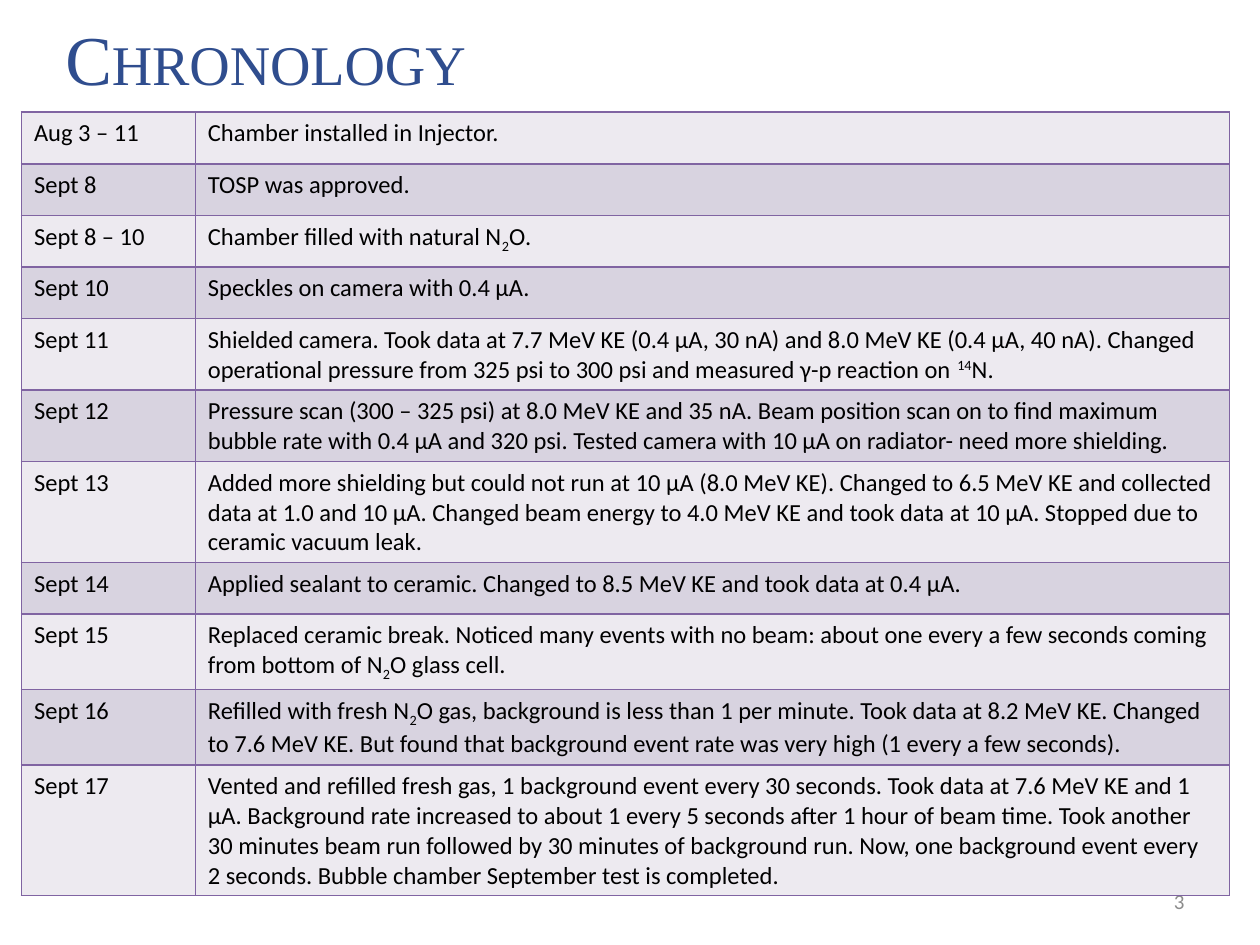
from pptx import Presentation
from pptx.dml.color import RGBColor
from pptx.enum.text import MSO_ANCHOR, PP_ALIGN
from pptx.oxml.ns import qn
from pptx.util import Inches, Pt
from lxml import etree

MIDDLE = MSO_ANCHOR.MIDDLE
LEFT, RIGHT = PP_ALIGN.LEFT, PP_ALIGN.RIGHT
SHIFTS = {"2": "-25000", "14": "30000"}
BANDS = ["EDEAF0", "D8D3E0"]
EDGE = "8064A2"


def color(code):
    return RGBColor.from_string(code)


def add_run(para, text, size, face, code):
    run = para.add_run()
    run.text = text
    run.font.size = Pt(size)
    run.font.name = face
    run.font.color.rgb = color(code)
    return run._r.get_or_add_rPr()


events = [
    ("Aug 3 – 11", "Chamber installed in Injector."),
    ("Sept 8", "TOSP was approved."),
    ("Sept 8 – 10", "Chamber filled with natural N|2|O."),
    ("Sept 10", "Speckles on camera with 0.4 μA."),
    ("Sept 11", "Shielded camera. Took data at 7.7 MeV KE (0.4 μA, 30 nA) and "
     "8.0 MeV KE (0.4 μA, 40 nA). Changed operational pressure from 325 psi to "
     "300 psi and measured γ-p reaction on |14|N."),
    ("Sept 12", "Pressure scan (300 – 325 psi) at 8.0 MeV KE and 35 nA. Beam "
     "position scan on to find maximum bubble rate with 0.4 μA and 320 psi. "
     "Tested camera with 10 μA on radiator- need more shielding."),
    ("Sept 13", "Added more shielding but could not run at 10 μA (8.0 MeV KE). "
     "Changed to 6.5 MeV KE and collected data at 1.0 and 10 μA. Changed beam "
     "energy to 4.0 MeV KE and took data at 10 μA. Stopped due to ceramic "
     "vacuum leak."),
    ("Sept 14", "Applied sealant to ceramic. Changed to 8.5 MeV KE and took "
     "data at 0.4 μA."),
    ("Sept 15", "Replaced ceramic break. Noticed many events with no beam: about "
     "one every a few seconds coming from bottom of N|2|O glass cell."),
    ("Sept 16", "Refilled with fresh N|2|O gas, background is less than 1 per "
     "minute. Took data at 8.2 MeV KE. Changed to 7.6 MeV KE. But found that "
     "background event rate was very high (1 every a few seconds)."),
    ("Sept 17", "Vented and refilled fresh gas, 1 background event every 30 "
     "seconds. Took data at 7.6 MeV KE and 1 μA. Background rate increased to "
     "about 1 every 5 seconds after 1 hour of beam time. Took another 30 minutes "
     "beam run followed by 30 minutes of background run. Now, one background "
     "event every 2 seconds. Bubble chamber September test is completed."),
]

deck = Presentation()
deck.slide_width, deck.slide_height = Inches(10), Inches(7.5)
slide = deck.slides.add_slide(deck.slide_layouts[6])

labels = [
    ("3", (7.17, 6.95, 2.33, 0.4), RIGHT, 12, "Calibri", "8C8C8C"),
    ("Chronology", (0.42, 0, 9, 0.92), LEFT, 40, "Times New Roman", "2F4D8E"),
]
for text, place, align, size, face, code in labels:
    box = slide.shapes.add_textbox(*map(Inches, place))
    frame = box.text_frame
    frame.word_wrap = True
    frame.vertical_anchor = MIDDLE
    para = frame.paragraphs[0]
    para.alignment = align
    props = add_run(para, text, size, face, code)
    if text == "Chronology":
        props.set("cap", "small")

widths = [1.38, 8.21]
height = 0.41
table = slide.shapes.add_table(
    len(events), len(widths), Inches(0.17), Inches(0.89),
    Inches(sum(widths)), Inches(height * len(events))).table
table.first_row = False
for column, width in zip(table.columns, widths):
    column.width = Inches(width)

for row, event in enumerate(events):
    table.rows[row].height = Inches(height)
    for col, text in enumerate(event):
        cell = table.cell(row, col)
        props = cell._tc.get_or_add_tcPr()
        for side in ("lnL", "lnR", "lnT", "lnB"):
            line = etree.SubElement(props, qn("a:" + side), w=str(Pt(1)))
            paint = etree.SubElement(line, qn("a:solidFill"))
            etree.SubElement(paint, qn("a:srgbClr"), val=EDGE)
        cell.fill.solid()
        cell.fill.fore_color.rgb = color(BANDS[row % 2])
        para = cell.text_frame.paragraphs[0]
        for part in text.split("|"):
            props = add_run(para, part, 14, "Calibri", "000000")
            if part in SHIFTS:
                props.set("baseline", SHIFTS[part])

deck.save("out.pptx")
